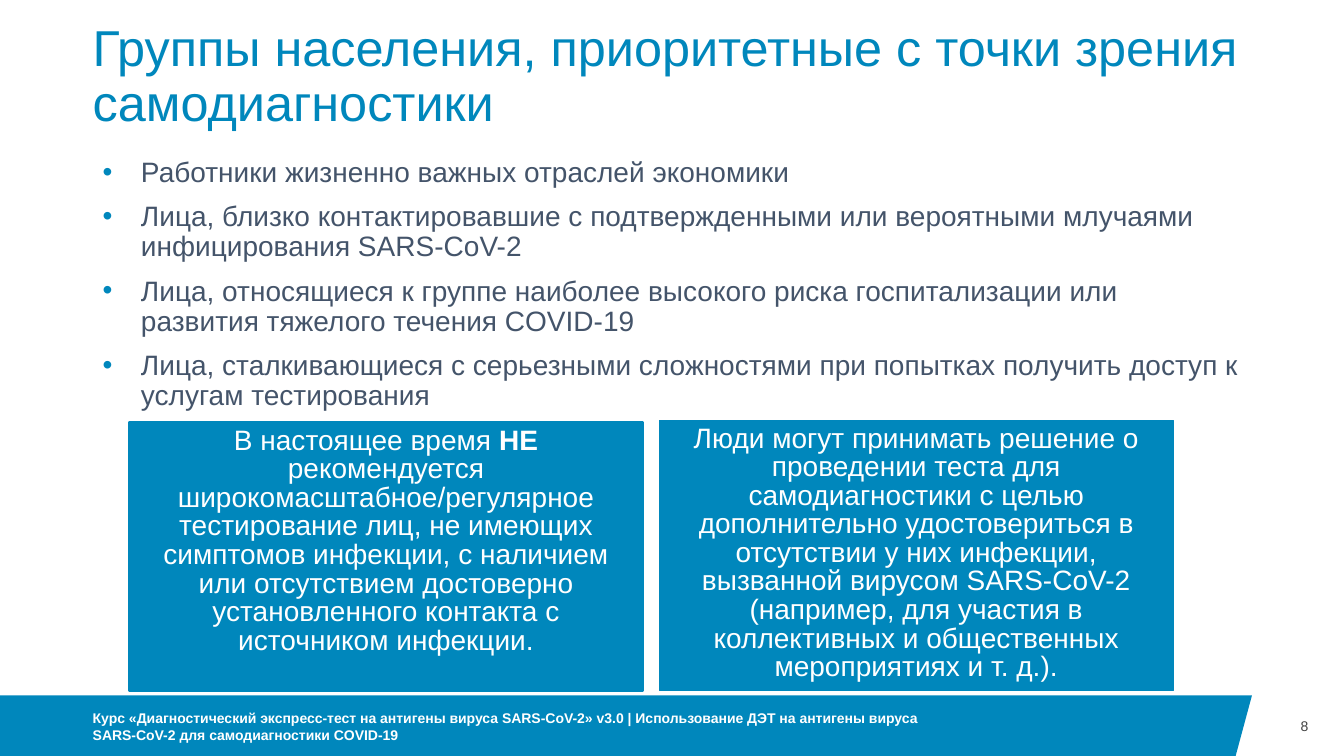
from pptx import Presentation, util as u
from pptx.dml.color import RGBColor
from pptx.enum import shapes, text
from pptx.oxml import parse_xml
from pptx.oxml.ns import nsdecls

BLUE = RGBColor(0x00, 0x87, 0xBC)
SLATE = RGBColor(0x44, 0x54, 0x6A)
GREY = RGBColor(0x42, 0x42, 0x42)
WHITE = RGBColor(0xFF, 0xFF, 0xFF)
SLIDE_WIDTH, SLIDE_HEIGHT = u.Inches(13.33), u.Inches(7.5)
MARGIN, CONTENT_WIDTH = 6.9, 86.25
CALLOUT_WIDTH, CALLOUT_BOTTOM = 38.25, 91.34
BANNER_TOP, BANNER_HEIGHT = 92, 8

TITLE = "Группы населения, приоритетные с точки зрения самодиагностики"
PRIORITY_GROUPS = [
    "Работники жизненно важных отраслей экономики",
    "Лица, близко контактировавшие с подтвержденными или вероятными млучаями инфицирования SARS-CoV-2",
    "Лица, относящиеся к группе наиболее высокого риска госпитализации или развития тяжелого течения COVID-19",
    "Лица, сталкивающиеся с серьезными сложностями при попытках получить доступ к услугам тестирования",
]
NOT_RECOMMENDED = [
    ("В настоящее время ", False),
    ("НЕ", True),
    (" рекомендуется широкомасштабное/регулярное тестирование лиц, не имеющих симптомов инфекции, "
     "c наличием или отсутствием достоверно установленного контакта c источником инфекции.", False),
]
OWN_DECISION = [
    ("Люди могут принимать решение о проведении теста для самодиагностики с целью дополнительно "
     "удостовериться в отсутствии у них инфекции, вызванной вирусом SARS-CoV-2 (например, для "
     "участия в коллективных и общественных мероприятиях и т. д.).", False),
]
COURSE = ("Курс «Диагностический экспресс-тест на антигены вируса SARS-CoV-2» v3.0 | Использование "
          "ДЭТ на антигены вируса SARS-CoV-2 для самодиагностики COVID-19")
PAGE = "8"


def box_of(left, top, width, height):
    """Turn percentages of the slide into a box in EMU."""
    return (int(SLIDE_WIDTH * left / 100), int(SLIDE_HEIGHT * top / 100),
            int(SLIDE_WIDTH * width / 100), int(SLIDE_HEIGHT * height / 100))


def add_run(paragraph, words, size, color, bold=False):
    """Add one formatted run to a paragraph."""
    run = paragraph.add_run()
    run.text = words
    run.font.name, run.font.size, run.font.bold = "Arial", u.Pt(size), bold
    run.font.color.rgb = color


def set_frame(frame, anchor, inset_x=0, inset_y=0):
    """Set wrapping, anchor and insets of a text frame."""
    frame.word_wrap = True
    frame.auto_size = text.MSO_AUTO_SIZE.NONE
    frame.vertical_anchor = anchor
    frame.margin_left = frame.margin_right = u.Inches(inset_x)
    frame.margin_top = frame.margin_bottom = u.Inches(inset_y)


def add_title(slide, box):
    """Place the slide title in its box."""
    title = slide.shapes.title
    title.left, title.top, title.width, title.height = box
    set_frame(title.text_frame, text.MSO_ANCHOR.BOTTOM)
    heading = title.text_frame.paragraphs[0]
    heading.alignment = text.PP_ALIGN.LEFT
    heading.line_spacing = 0.9
    add_run(heading, TITLE, 36, BLUE)


def add_priority_groups(slide, box):
    """List the priority groups as bullets in the box."""
    frame = slide.shapes.add_textbox(*box).text_frame
    set_frame(frame, text.MSO_ANCHOR.TOP, 0.1, 0.05)
    for index, group in enumerate(PRIORITY_GROUPS):
        item = frame.add_paragraph() if index else frame.paragraphs[0]
        item.line_spacing, item.space_before = 0.9, u.Pt(10)
        add_run(item, group, 20, SLATE)
        properties = item._p.get_or_add_pPr()
        properties.set("marL", str(u.Inches(0.38)))
        properties.set("indent", str(-u.Inches(0.38)))
        for bullet in (f'<a:buClr {nsdecls("a")}><a:srgbClr val="{BLUE}"/></a:buClr>',
                       f'<a:buFont {nsdecls("a")} typeface="Arial"/>',
                       f'<a:buChar {nsdecls("a")} char="•"/>'):
            properties.append(parse_xml(bullet))


def add_callout(slide, box, parts, line_width):
    """Draw a filled box with centred text."""
    callout = slide.shapes.add_shape(shapes.MSO_SHAPE.RECTANGLE, *box)
    callout.shadow.inherit = False
    callout.fill.solid()
    callout.fill.fore_color.rgb = BLUE
    callout.line.color.rgb = BLUE
    callout.line.width = u.Pt(line_width)
    set_frame(callout.text_frame, text.MSO_ANCHOR.TOP, 0.1, 0.05)
    message = callout.text_frame.paragraphs[0]
    message.alignment = text.PP_ALIGN.CENTER
    message.line_spacing = 0.85
    for words, bold in parts:
        add_run(message, words, 20, WHITE, bold)


def add_banner(slide, box):
    """Draw the bottom band with its slanted right end."""
    left, top, width, height = box
    right, bottom = left + width, top + height
    slant = int(width * 0.013)
    builder = slide.shapes.build_freeform(left, top)
    builder.add_line_segments([(right, top), (right - slant, bottom), (left, bottom)], close=True)
    banner = builder.convert_to_shape()
    banner.shadow.inherit = False
    banner.fill.solid()
    banner.fill.fore_color.rgb = BLUE
    banner.line.fill.background()


def add_label(slide, box, words, color, bold, alignment):
    """Write a small footer label, centred vertically in its box."""
    frame = slide.shapes.add_textbox(*box).text_frame
    set_frame(frame, text.MSO_ANCHOR.MIDDLE)
    frame.paragraphs[0].alignment = alignment
    add_run(frame.paragraphs[0], words, 10, color, bold)


def main():
    """Build the slide and save it."""
    deck = Presentation()
    deck.slide_width, deck.slide_height = SLIDE_WIDTH, SLIDE_HEIGHT
    slide = deck.slides.add_slide(deck.slide_layouts[5])
    banner_end = MARGIN + CONTENT_WIDTH

    add_banner(slide, box_of(0, BANNER_TOP, banner_end, BANNER_HEIGHT))
    add_title(slide, box_of(MARGIN, 3.73, CONTENT_WIDTH, 13.73))
    add_priority_groups(slide, box_of(MARGIN, 20.27, CONTENT_WIDTH, 64.8))
    for left, top, parts, line_width in ((9.6, 55.87, NOT_RECOMMENDED, 2),
                                         (49.05, 55.6, OWN_DECISION, 0.75)):
        add_callout(slide, box_of(left, top, CALLOUT_WIDTH, CALLOUT_BOTTOM - top), parts, line_width)
    add_label(slide, box_of(MARGIN, 92.4, 62.7, 7.33), COURSE, WHITE, True, text.PP_ALIGN.LEFT)
    add_label(slide, box_of(banner_end, BANNER_TOP, 4.2, BANNER_HEIGHT), PAGE, GREY, False,
              text.PP_ALIGN.RIGHT)
    deck.save("out.pptx")


if __name__ == "__main__":
    main()
